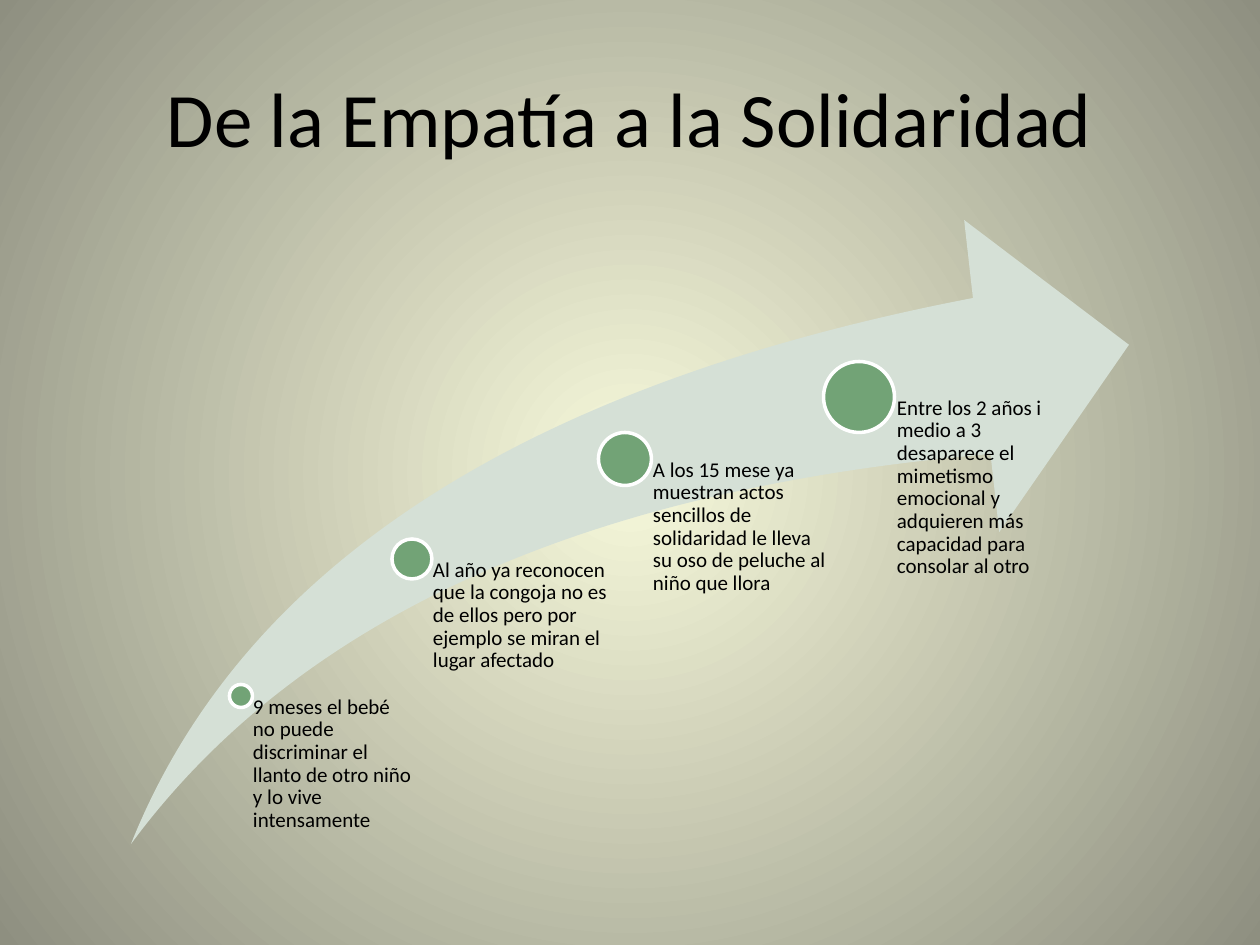
import pptx
import pptx.util
import pptx.dml.color
import pptx.enum.shapes
import pptx.enum.text
import pptx.oxml
import pptx.oxml.ns

RGB = pptx.dml.color.RGBColor.from_string
SHAPE = pptx.enum.shapes.MSO_SHAPE
THEME = {
    "font": "Calibri",
    "title_size": 44,
    "body_size": 12,
    "text": RGB("000000"),
    "center": RGB("F7F9DB"),
    "edge": RGB("8E8F80"),
    "arrow": RGB("D5E0D6"),
    "dot": RGB("72A376"),
    "ring": RGB("FFFFFF"),
}


def px(*values):
    return [pptx.util.Emu(round(v * 914400 / 126)) for v in values]


def add_text(s, box, text, size, inset):
    tf = s.shapes.add_textbox(*px(*box)).text_frame
    tf.word_wrap = True
    tf.margin_left, tf.margin_top, tf.margin_right, tf.margin_bottom = px(*inset)
    tf.text = text
    font = tf.paragraphs[0].runs[0].font
    font.name = THEME["font"]
    font.size = pptx.util.Pt(size)
    font.color.rgb = THEME["text"]
    return tf


prs = pptx.Presentation()
prs.slide_width, prs.slide_height = px(1260, 945)
s = prs.slides.add_slide(prs.slide_layouts[6])

fill = s.background.fill
fill.gradient()
for stop, color in zip(fill.gradient_stops, ("center", "edge")):
    stop.color.rgb = THEME[color]
lin = next(s.element.iter(pptx.oxml.ns.qn("a:lin")))
lin.getparent().replace(lin, pptx.oxml.parse_xml(
    f'<a:path {pptx.oxml.ns.nsdecls("a")} path="circle">'
    '<a:fillToRect l="50000" t="50000" r="50000" b="50000"/></a:path>'))

tf = add_text(s, (63, 38, 1134, 157), "De la Empatía a la Solidaridad",
              THEME["title_size"], (13, 6, 13, 6))
tf.vertical_anchor = pptx.enum.text.MSO_ANCHOR.MIDDLE
tf.paragraphs[0].alignment = pptx.enum.text.PP_ALIGN.CENTER

arrow = s.shapes.add_shape(SHAPE.SWOOSH_ARROW, *px(131, 220, 998, 624))
arrow.adjustments[0] = 0.25
arrow.adjustments[1] = 0.25
arrow.shadow.inherit = False
arrow.fill.solid()
arrow.fill.fore_color.rgb = THEME["arrow"]
arrow.line.fill.background()

bottom = 844
milestones = [
    (241, 696, 23, 171, "9 meses el bebé no puede discriminar el llanto de otro niño "
     "y lo vive intensamente"),
    (412, 559, 40, 209, "Al año ya reconocen que la congoja no es de ellos pero por "
     "ejemplo se miran el lugar afectado"),
    (625, 459, 53, 209, "A los 15 mese ya muestran actos sencillos de solidaridad "
     "le lleva su oso de peluche al niño que llora"),
    (859, 397, 71, 209, "Entre los 2 años i medio a 3 desaparece el mimetismo emocional "
     "y adquieren más capacidad para consolar al otro"),
]
for x, y, d, width, text in milestones:
    dot = s.shapes.add_shape(SHAPE.OVAL, *px(x - d / 2, y - d / 2, d, d))
    dot.shadow.inherit = False
    dot.fill.solid()
    dot.fill.fore_color.rgb = THEME["dot"]
    dot.line.color.rgb = THEME["ring"]
    dot.line.width = pptx.util.Pt(2)
    tf = add_text(s, (x, y, width, bottom - y), text, THEME["body_size"],
                  (round(d * 0.53), 0, 0, 0))
    tf.paragraphs[0].line_spacing = 0.9

prs.save("out.pptx")
